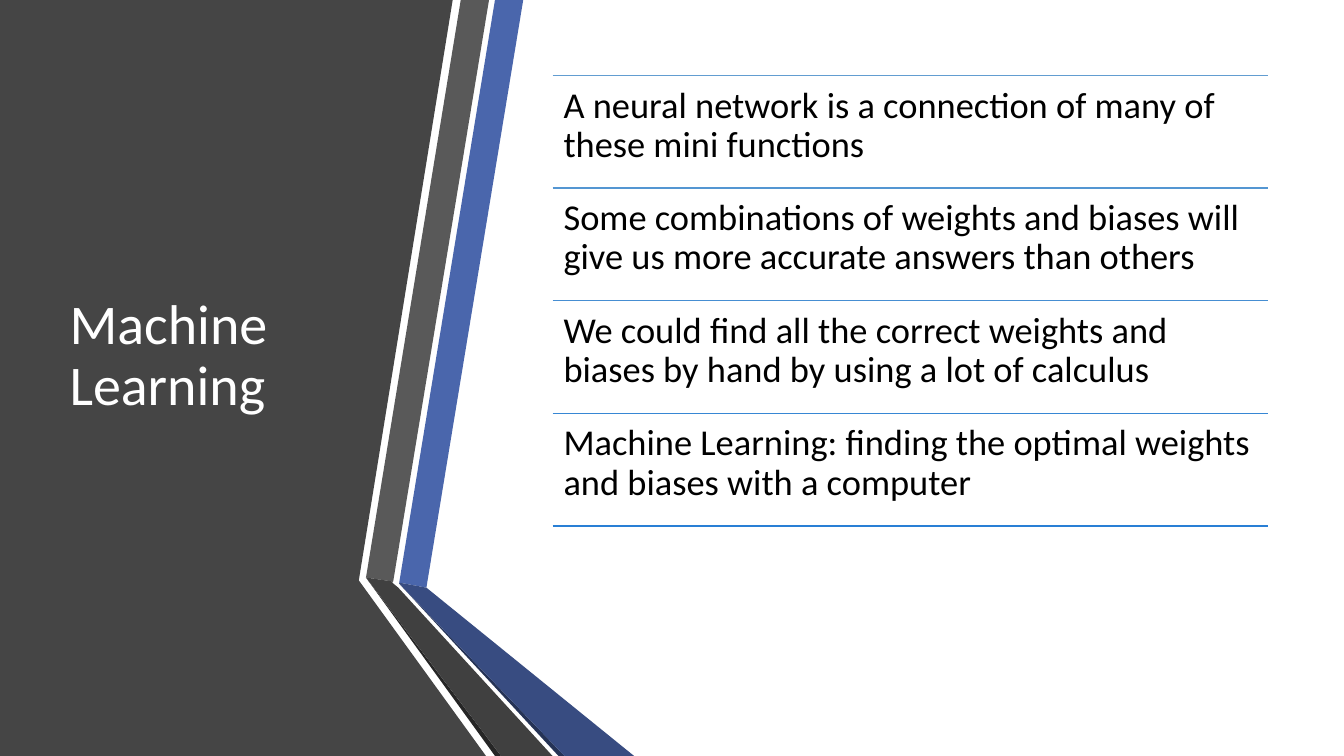
from dataclasses import dataclass

from lxml import etree
from pptx import Presentation
from pptx import util as u
from pptx.dml import color, fill
from pptx.enum import shapes, text
from pptx.oxml import ns
from pptx.slide import Slide
from pptx.text import text as txt

FONT = "Calibri"
LEFT, TOP, WIDTH, STEP = 5.48, 0.75, 7.1, 1.117


@dataclass
class Facet:
    tint: str
    points: list[tuple[float, float]]


@dataclass
class Row:
    tint: str
    words: str


FACETS = [
    Facet("454545", [(0, 0), (4.49, 0), (3.56, 5.75), (3.56, 5.76), (4.82, 7.5), (0, 7.5)]),
    Facet("4A66AC", [(3.96, 5.78), (4.23, 5.83), (5.19, 0), (4.91, 0)]),
    Facet("595959", [(4.85, 0), (4.57, 0), (3.63, 5.73), (3.9, 5.77)]),
    Facet("262626", [(3.63, 5.73), (4.91, 7.5), (4.97, 7.5)]),
    Facet("253356", [(3.96, 5.79), (5.54, 7.5), (5.6, 7.5)]),
    Facet("384C81", [(3.96, 5.79), (5.6, 7.5), (6.29, 7.5), (4.23, 5.83), (3.96, 5.78)]),
    Facet("404040", [(5.48, 7.5), (3.95, 5.83), (3.89, 5.78), (3.9, 5.77), (3.63, 5.73),
                     (4.97, 7.5)]),
]

ROWS = [
    Row("629DD1", "A neural network is a connection of many of these mini functions"),
    Row("5496D2", "Some combinations of weights and biases will give us more accurate "
                  "answers than others"),
    Row("468ED2", "We could find all the correct weights and biases by hand by using "
                  "a lot of calculus"),
    Row("3787D4", "Machine Learning: finding the optimal weights and biases with a computer"),
]
END_TINT = "297FD5"


def paint(target: fill.FillFormat, tint: str) -> None:
    target.solid()
    target.fore_color.rgb = color.RGBColor.from_string(tint)


def write(frame: txt.TextFrame, words: str, size: float, tint: str) -> None:
    frame.word_wrap = True
    frame.auto_size = text.MSO_AUTO_SIZE.NONE
    para = frame.paragraphs[0]
    para.alignment = text.PP_ALIGN.LEFT
    para.line_spacing = 0.9
    run = para.add_run()
    run.text = words
    run.font.name = FONT
    run.font.size = u.Pt(size)
    paint(run.font.fill, tint)


def add_facet(slide: Slide, facet: Facet) -> None:
    spots = [(u.Inches(x), u.Inches(y)) for x, y in facet.points]
    pen = slide.shapes.build_freeform(*spots[0])
    pen.add_line_segments(spots[1:], close=True)
    shape = pen.convert_to_shape()
    shape.shadow.inherit = False
    paint(shape.fill, facet.tint)
    shape.line.fill.background()


def add_rule(slide: Slide, top: float, tint: str) -> None:
    rule = slide.shapes.add_connector(
        shapes.MSO_CONNECTOR.STRAIGHT,
        u.Inches(LEFT), u.Inches(top), u.Inches(LEFT + WIDTH), u.Inches(top))
    paint(rule.line.fill, tint)
    rule.line.width = u.Pt(1)
    etree.SubElement(rule._element.spPr, ns.qn("a:effectLst"))


def add_row(slide: Slide, top: float, row: Row) -> None:
    add_rule(slide, top, row.tint)
    box = slide.shapes.add_textbox(
        u.Inches(LEFT), u.Inches(top), u.Inches(WIDTH), u.Inches(STEP))
    frame = box.text_frame
    frame.margin_left = frame.margin_right = u.Inches(0.11)
    frame.margin_top = frame.margin_bottom = u.Inches(0.11)
    write(frame, row.words, 26, "000000")


def add_title(slide: Slide, words: str) -> None:
    title = slide.shapes.title
    slide.shapes._spTree.append(title._element)
    title.left, title.top = u.Inches(0.59), u.Inches(0.75)
    title.width, title.height = u.Inches(3.04), u.Inches(5.58)
    title.text_frame.vertical_anchor = text.MSO_ANCHOR.MIDDLE
    write(title.text_frame, words, 40, "FFFFFF")


def main() -> None:
    deck = Presentation()
    deck.slide_width, deck.slide_height = u.Inches(13.33), u.Inches(7.5)
    slide = deck.slides.add_slide(deck.slide_layouts[5])
    paint(slide.background.fill, "FFFFFF")
    for facet in FACETS:
        add_facet(slide, facet)
    add_title(slide, "Machine Learning")
    for i, row in enumerate(ROWS):
        add_row(slide, TOP + i * STEP, row)
    add_rule(slide, TOP + len(ROWS) * STEP, END_TINT)
    deck.save("out.pptx")


if __name__ == "__main__":
    main()
